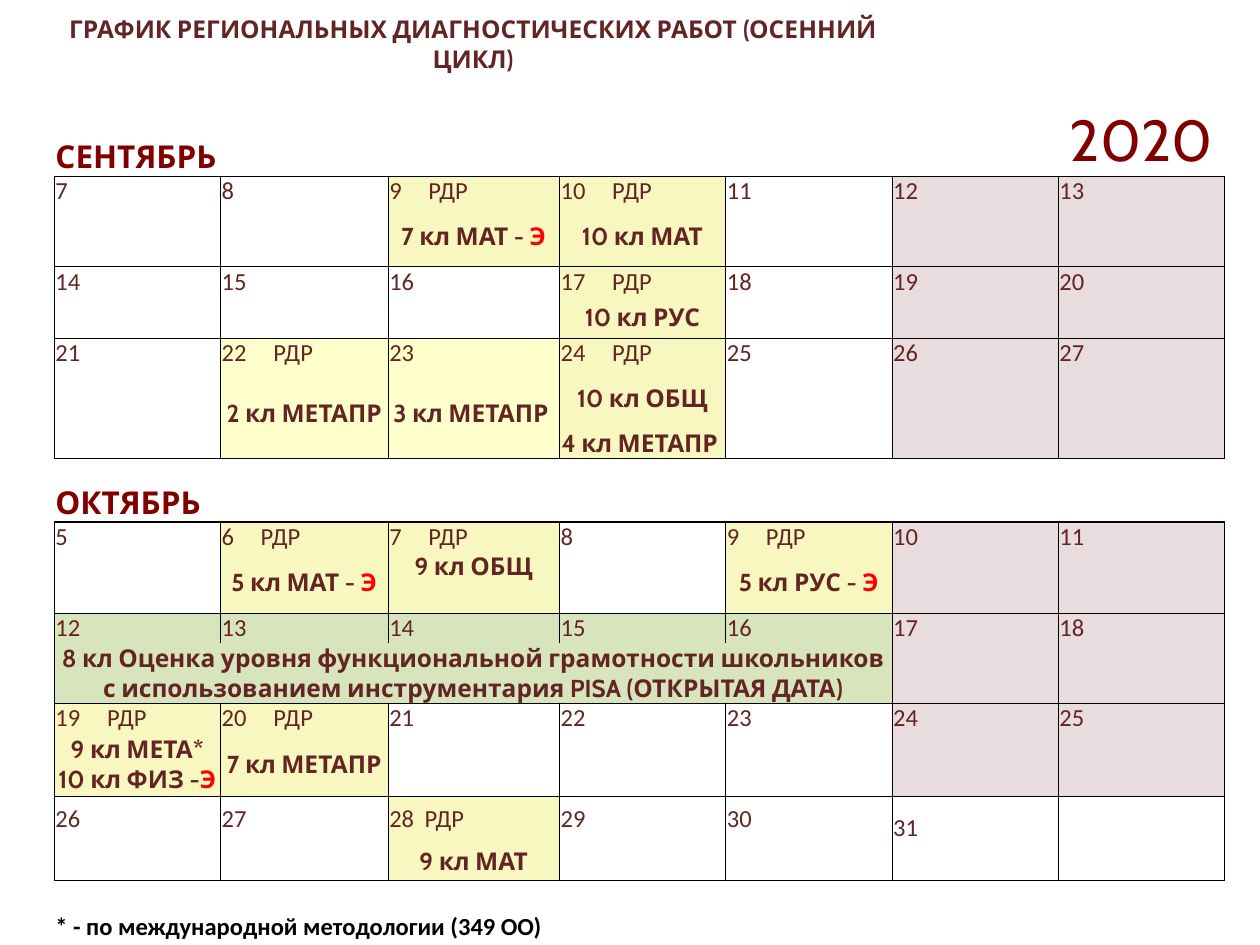
import pptx
import pptx.util
import pptx.dml.color
import pptx.enum.text
import pptx.oxml.ns
from lxml import etree

Inches, Pt = pptx.util.Inches, pptx.util.Pt
ALIGN, ANCHOR = pptx.enum.text.PP_ALIGN, pptx.enum.text.MSO_ANCHOR

COLORS = {
    "wine": "632523", "maroon": "800000", "red": "FF0000", "black": "000000",
    "white": "FFFFFF", "rose": "E8DCDE", "cream": "F7F7BF", "pale": "FFFFCC",
    "green": "D8E4BC",
}
STYLES = {
    "date": {"name": "Calibri", "size": Pt(14), "bold": False, "color": "wine"},
    "event": {"name": "Cabin", "size": Pt(14), "bold": True, "color": "wine"},
    "month": {"name": "Cabin", "size": Pt(18), "bold": True, "color": "maroon"},
    "year": {"name": "Cabin", "size": Pt(33), "bold": False, "color": "maroon"},
    "note": {"name": "Calibri", "size": Pt(14), "bold": True, "color": "black"},
}

TITLE = "ГРАФИК РЕГИОНАЛЬНЫХ ДИАГНОСТИЧЕСКИХ РАБОТ (ОСЕННИЙ ЦИКЛ)"
YEAR = "2020"
NOTE = "* - по международной методологии (349 ОО)"
ELECTRONIC = "Э"
WORK = "РДР"
MONTHS = [
    {
        "name": "СЕНТЯБРЬ", "heading_row": 1, "first_day": 7, "week_rows": [2, 2, 3],
        "work_days": [9, 10, 17, 22, 24],
        "fills": {9: "cream", 10: "cream", 17: "cream", 22: "pale", 23: "pale", 24: "cream"},
        "events": {
            9: [("7 кл МАТ - Э", ANCHOR.MIDDLE)],
            10: [("10 кл МАТ", ANCHOR.MIDDLE)],
            17: [("10 кл РУС", ANCHOR.MIDDLE)],
            22: [("2 кл МЕТАПР", ANCHOR.BOTTOM)],
            23: [("3 кл МЕТАПР\u00a0", ANCHOR.BOTTOM)],
            24: [("10 кл ОБЩ", ANCHOR.MIDDLE), ("4 кл МЕТАПР\u00a0", ANCHOR.MIDDLE)],
        },
    },
    {
        "name": "ОКТЯБРЬ", "heading_row": 10, "first_day": 5, "week_rows": [2, 2, 2, 2],
        "work_days": [6, 7, 9, 19, 20, 28],
        "fills": {6: "cream", 7: "cream", 9: "cream", 19: "cream", 20: "cream", 28: "cream",
                  31: "white", **{day: "green" for day in range(12, 17)}},
        "events": {
            6: [("5 кл МАТ - Э", ANCHOR.MIDDLE)],
            7: [("9 кл ОБЩ", ANCHOR.TOP)],
            9: [("5 кл РУС - Э", ANCHOR.MIDDLE)],
            12: [("8 кл Оценка уровня функциональной грамотности школьников "
                  "с использованием инструментария PISA (ОТКРЫТАЯ ДАТА)", ANCHOR.MIDDLE)],
            19: [("9 кл МЕТА*\v10 кл ФИЗ -Э", ANCHOR.MIDDLE)],
            20: [("7 кл МЕТАПР", ANCHOR.MIDDLE)],
            28: [("9 кл МАТ", ANCHOR.MIDDLE)],
        },
    },
]
LAST_DAY = 31
OPEN_WEEK_START = 12
THICK_EDGES = {(8, "B"), (9, "T"), (10, "B"), (11, "T")}
DAY_COLUMNS = [0, 1, 2, 4, 5, 6, 7]
COLUMN_WIDTHS = [1.32, 1.33, 0.68, 0.68, 1.32, 1.32, 1.32, 1.32]
ROW_HEIGHTS = [0.72, 0.56, 0.19, 0.48, 0.19, 0.33, 0.19, 0.48, 0.19, 0.2, 0.3,
               0.19, 0.49, 0.19, 0.37, 0.19, 0.5, 0.37, 0.3, 0.25, 0.19]

prs = pptx.Presentation()
prs.slide_width, prs.slide_height = Inches(10), Inches(7.5)
slide = prs.slides.add_slide(prs.slide_layouts[6])
schedule = slide.shapes.add_table(
    len(ROW_HEIGHTS), len(COLUMN_WIDTHS), Inches(0.43), Inches(0.12),
    Inches(sum(COLUMN_WIDTHS)), Inches(sum(ROW_HEIGHTS))).table
schedule.first_row = schedule.horz_banding = False
for column, width in zip(schedule.columns, COLUMN_WIDTHS):
    column.width = Inches(width)
for row, height in zip(schedule.rows, ROW_HEIGHTS):
    row.height = Inches(height)


def rgb(name):
    return pptx.dml.color.RGBColor.from_string(COLORS[name])


def add_element(parent, tag, **attributes):
    return etree.SubElement(parent, pptx.oxml.ns.qn(tag), attributes)


def draw_edges(row, column, sides):
    properties = schedule.cell(row, column)._tc.get_or_add_tcPr()
    for position, side in enumerate("LRTB"):
        width = Pt(1 if (row, side) in THICK_EDGES else 0.5)
        edge = etree.Element(pptx.oxml.ns.qn("a:ln" + side), w=str(width))
        if side in sides:
            ink = add_element(edge, "a:solidFill")
            add_element(ink, "a:srgbClr", val=COLORS["black"])
        else:
            add_element(edge, "a:noFill")
        properties.insert(position, edge)


def paint(row, column, fill):
    cell = schedule.cell(row, column)
    if fill:
        cell.fill.solid()
        cell.fill.fore_color.rgb = rgb(fill)
    else:
        cell.fill.background()


def write(row, column, text, style, align=ALIGN.LEFT, anchor=ANCHOR.BOTTOM, tab=None):
    cell = schedule.cell(row, column)
    cell.vertical_anchor = anchor
    paragraph = cell.text_frame.paragraphs[0]
    paragraph.alignment = align
    if tab:
        stops = add_element(paragraph._p.get_or_add_pPr(), "a:tabLst")
        add_element(stops, "a:tab", pos=str(Inches(tab)), algn="l")
    pieces = [(text, STYLES[style]["color"])]
    if text.endswith(ELECTRONIC):
        pieces = [(text[:-1], "wine"), (ELECTRONIC, "red")]
    for piece, color in pieces:
        for index, line in enumerate(piece.split("\v")):
            if index:
                paragraph.add_line_break()
            run = paragraph.add_run()
            run.text = line
            for key, value in STYLES[style].items():
                if key != "color":
                    setattr(run.font, key, value)
            run.font.color.rgb = rgb(color)


def merge(row, first, last):
    schedule.cell(row, first).merge(schedule.cell(row, last))


def place_week(month, first_row, row_count, first_day):
    last_row = first_row + row_count - 1
    for weekday, column in enumerate(DAY_COLUMNS):
        day = first_day + weekday
        weekend = weekday > 4
        fill = month["fills"].get(day, "rose" if weekend else "white")
        open_date = first_day == OPEN_WEEK_START and not weekend
        covered = [column, column + 1] if column == 2 else [column]
        for row in range(first_row, last_row + 1):
            sides = "LR" + "T" * (row == first_row) + "B" * (row == last_row)
            for part in covered:
                paint(row, part, fill if day <= LAST_DAY else None)
                draw_edges(row, part, sides)
            if len(covered) > 1 and not (open_date and row > first_row):
                merge(row, *covered)
        if day > LAST_DAY:
            continue
        label, tab = str(day), None
        if day in month["work_days"]:
            label += "\t" + WORK
            tab = 0.28 if day == 28 else 0.31 if day < 10 else 0.41
        write(first_row, column, label, "date",
              anchor=ANCHOR.BOTTOM if weekend else ANCHOR.MIDDLE, tab=tab)
        for offset, (text, anchor) in enumerate(month["events"].get(day, []), 1):
            write(first_row + offset, column, text, "event", ALIGN.CENTER, anchor)
    if first_day == OPEN_WEEK_START:
        merge(last_row, 0, DAY_COLUMNS[4])


calendar_rows = set()
for month in MONTHS:
    heading_row = month["heading_row"]
    merge(heading_row, 0, 5)
    write(heading_row, 0, month["name"], "month")
    first_row, first_day = heading_row + 1, month["first_day"]
    for row_count in month["week_rows"]:
        place_week(month, first_row, row_count, first_day)
        calendar_rows.update(range(first_row, first_row + row_count))
        first_row += row_count
        first_day += 7

for row in set(range(len(ROW_HEIGHTS))) - calendar_rows:
    sides = "T" * (row - 1 in calendar_rows) + "B" * (row + 1 in calendar_rows)
    for column in range(len(COLUMN_WIDTHS)):
        paint(row, column, None)
        draw_edges(row, column, sides)

merge(0, 0, 5)
write(0, 0, TITLE, "event", ALIGN.CENTER, ANCHOR.TOP)
write(1, 7, YEAR, "year", ALIGN.CENTER, ANCHOR.TOP)
merge(9, 0, 7)
merge(20, 0, 7)
write(20, 0, NOTE, "note")

for cell in schedule.iter_cells():
    for side, inset in {"left": 0.01, "right": 0.01, "top": 0, "bottom": 0}.items():
        setattr(cell, "margin_" + side, Inches(inset))
    if not cell.text_frame.text:
        cell.text_frame.paragraphs[0]._p.get_or_add_endParaRPr().set("sz", "800")

prs.save("out.pptx")
